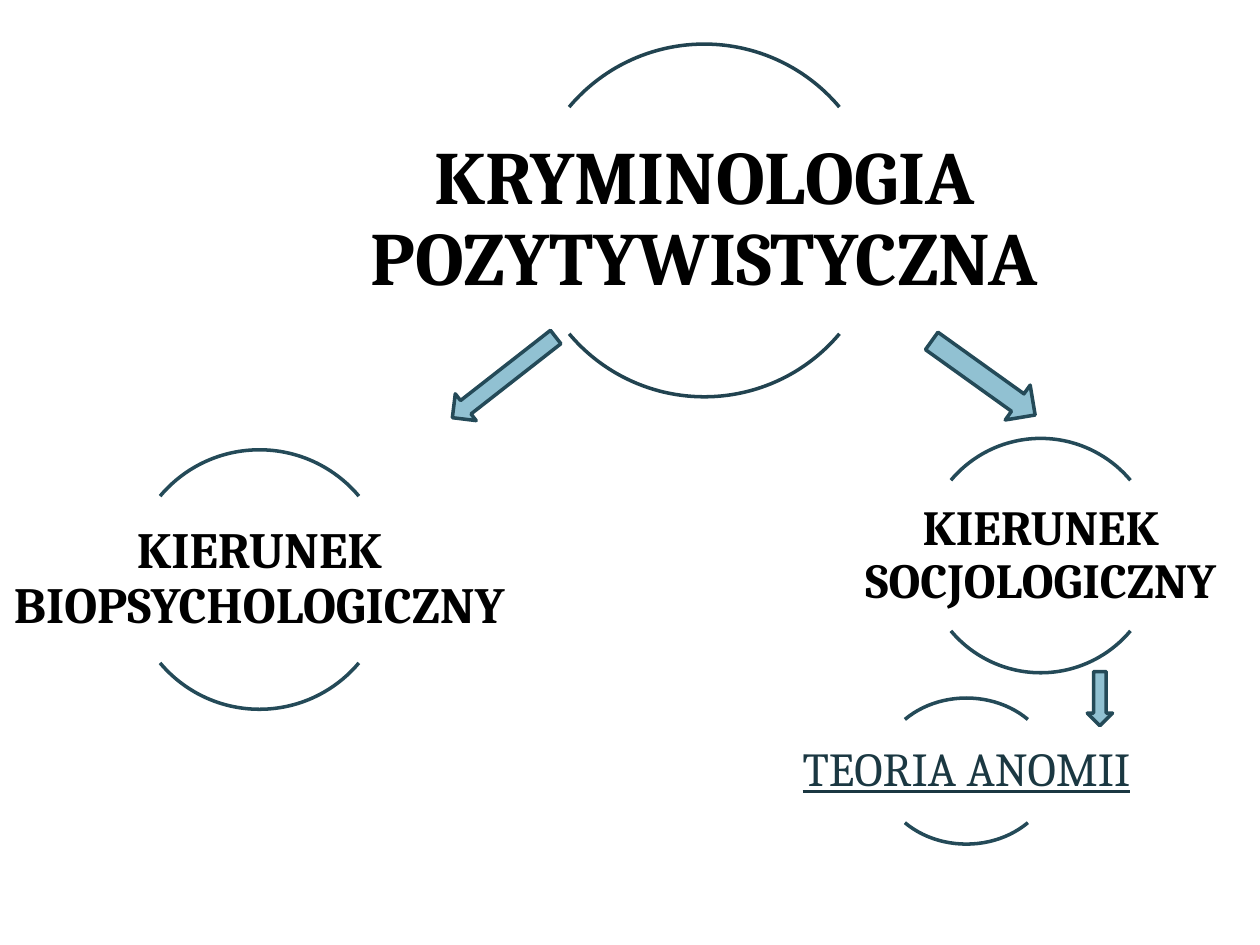
from pptx import Presentation
from pptx.dml.color import RGBColor
from pptx.enum.shapes import MSO_SHAPE
from pptx.enum.text import MSO_ANCHOR, MSO_AUTO_SIZE, PP_ALIGN
from pptx.util import Inches, Pt

ARC = MSO_SHAPE.ARC
RIGHT_ARROW, DOWN_ARROW = MSO_SHAPE.RIGHT_ARROW, MSO_SHAPE.DOWN_ARROW
MIDDLE, CENTER, NO_FIT = MSO_ANCHOR.MIDDLE, PP_ALIGN.CENTER, MSO_AUTO_SIZE.NONE

FONT = "Cambria"
BLACK, DARK, TEAL, PALE = "000000", "1B3842", "244A58", "91C1D2"
# Start and end angles of the top and bottom arcs, in units of 100000/60000 degree
ARC_ANGLES = ((132, 192), (24, 84))
LABEL_WIDTH, LABEL_HEIGHT = 2, 0.64  # shares of the ring's size


def color(hex_code):
    return RGBColor.from_string(hex_code)


def style_shape(shape, line, fill=None):
    shape.shadow.inherit = False
    if fill:
        shape.fill.solid()
        shape.fill.fore_color.rgb = color(fill)
    else:
        shape.fill.background()
    shape.line.color.rgb = color(line)
    shape.line.width = Pt(2)


def write_label(box, text, size, ink=BLACK, bold=True, underline=False):
    frame = box.text_frame
    frame.word_wrap = True
    frame.auto_size = NO_FIT
    frame.vertical_anchor = MIDDLE
    frame.margin_left = frame.margin_right = Inches(0.02)
    frame.margin_top = frame.margin_bottom = Inches(0.02)
    para = frame.paragraphs[0]
    para.alignment = CENTER
    para.line_spacing = 0.9
    span = para.add_run()
    span.text = text
    font = span.font
    font.name, font.size = FONT, Pt(size)
    font.bold, font.underline = bold, underline
    font.color.rgb = color(ink)


def add_ring(page, ring, text, size, line=TEAL, title=False, **label_format):
    """Draw a top and a bottom arc in the ring's box, with a wider label centred on it."""
    left, top, width, height = ring
    group = page.shapes.add_group_shape()
    for angles in ARC_ANGLES:
        arc = group.shapes.add_shape(ARC, *map(Inches, ring))
        arc.adjustments[0], arc.adjustments[1] = angles
        style_shape(arc, line)
    label_box = [Inches(value) for value in (
        left + width * (1 - LABEL_WIDTH) / 2,
        top + height * (1 - LABEL_HEIGHT) / 2,
        width * LABEL_WIDTH,
        height * LABEL_HEIGHT,
    )]
    if title:
        label = page.shapes.title
        label.left, label.top, label.width, label.height = label_box
    else:
        label = group.shapes.add_textbox(*label_box)
    write_label(label, text, size, **label_format)


def add_arrow(page, kind, box, rotation=0):
    arrow = page.shapes.add_shape(kind, *map(Inches, box))
    arrow.rotation = rotation
    style_shape(arrow, TEAL, PALE)


def main():
    deck = Presentation()
    deck.slide_width, deck.slide_height = Inches(10), Inches(7.5)
    page = deck.slides.add_slide(deck.slide_layouts.get_by_name("Title Only"))

    add_ring(page, (4.19, 0.35, 2.8, 2.8), "KRYMINOLOGIA POZYTYWISTYCZNA", 43,
             line="214350", title=True)
    add_ring(page, (1.03, 3.57, 2.06, 2.06), "KIERUNEK BIOPSYCHOLOGICZNY", 29)
    add_ring(page, (7.33, 3.48, 1.86, 1.86), "KIERUNEK SOCJOLOGICZNY", 28)
    add_ring(page, (6.98, 5.54, 1.38, 1.16), "TEORIA ANOMII", 27,
             ink=DARK, bold=False, underline=True)

    add_arrow(page, RIGHT_ARROW, (7.3, 2.83, 1.01, 0.34), 35.6)
    add_arrow(page, RIGHT_ARROW, (3.48, 2.86, 1.04, 0.27), 142)
    add_arrow(page, DOWN_ARROW, (8.63, 5.33, 0.2, 0.43))
    deck.save("out.pptx")


if __name__ == "__main__":
    main()
